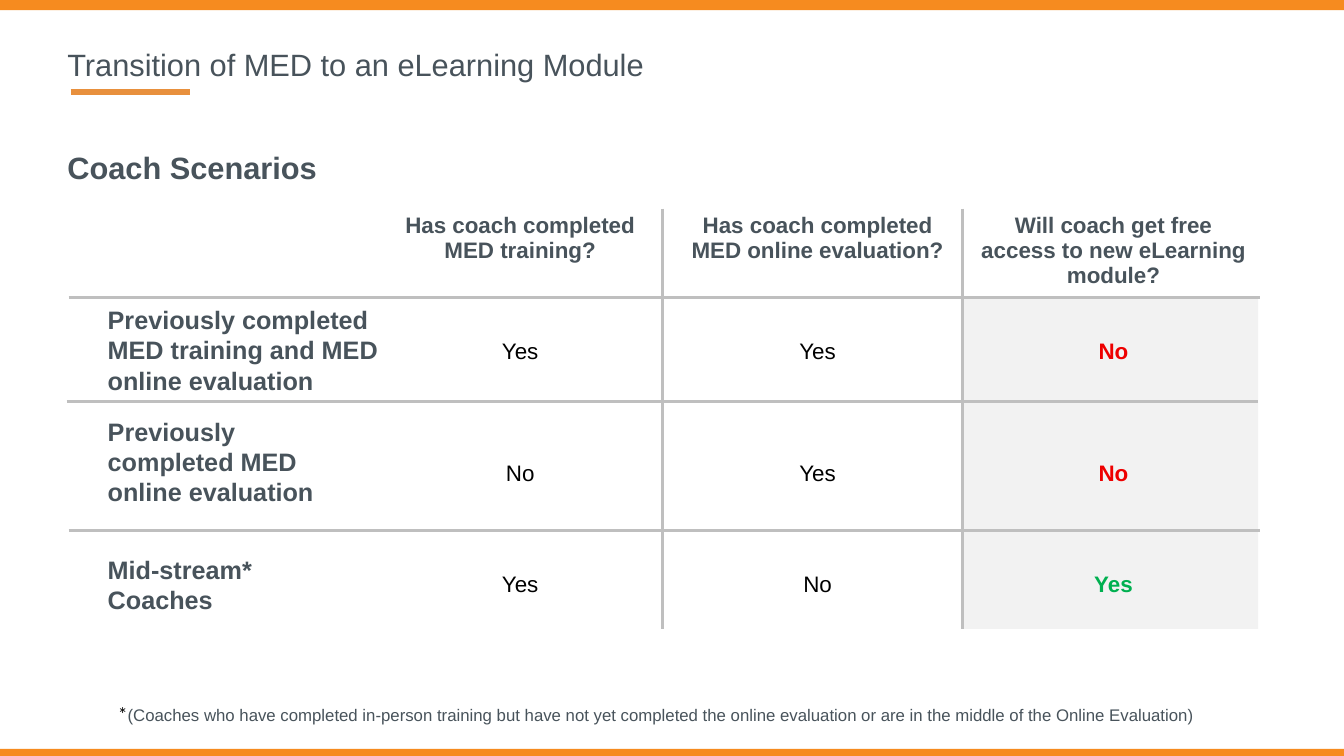
"""Build the slide of coach scenarios for the move to an eLearning module."""
from dataclasses import dataclass

import lxml.etree
import pptx
import pptx.dml.color
import pptx.enum.shapes
import pptx.enum.text
import pptx.oxml.ns
import pptx.util

Inches = pptx.util.Inches
Pt = pptx.util.Pt
SLATE, BLACK, RED, GREEN = "48535B", "000000", "EE0000", "00B050"
ORANGE, GREY, PALE = "F68B1F", "BFBFBF", "F2F2F2"
NO_STYLE_TABLE = "{2D5ABB26-0587-4C30-8999-92F81FD0307C}"


@dataclass
class Span:
    text: str
    size: float
    color: str = SLATE
    bold: bool = False
    font: str = "Arial"


@dataclass
class TextBlock:
    left: float
    top: float
    width: float
    height: float
    spans: list[Span]
    middle: bool = False


@dataclass
class Bar:
    left: float
    top: float
    width: float
    height: float
    color: str


@dataclass
class Rule:
    x1: float
    y1: float
    x2: float
    y2: float
    color: str = GREY
    weight: float = 2.25


@dataclass
class Scenario:
    height: float
    answers: list[str]
    verdict_color: str
    drop: float = 0.05


BARS = [
    Bar(0, 0, 13.33, 0.1, ORANGE),
    Bar(0, 7.43, 13.33, 0.07, ORANGE),
    Bar(9.55, 2.95, 2.93, 3.29, PALE),
]
HEADINGS = [
    TextBlock(0.57, 0.38, 7.96, 0.51,
              [Span("Transition of MED to an eLearning Module", 22)], True),
    TextBlock(0.57, 1.43, 11.08, 0.51, [Span("Coach Scenarios", 22, bold=True)]),
    TextBlock(1.07, 6.91, 11.74, 0.34, [
        Span("*", 14, BLACK, font="Calibri"),
        Span("(Coaches who have completed in-person training but have not yet "
             "completed the online evaluation or are in the middle of the "
             "Online Evaluation)", 12),
    ]),
]
LABELS = [
    TextBlock(0.97, top, width, height, [Span(text, 18, bold=True)])
    for top, width, height, text in [
        (2.97, 3, 1.01, "Previously completed MED training and MED online evaluation"),
        (4.08, 2.58, 1.01, "Previously completed MED online evaluation"),
        (5.45, 2.49, 0.71, "Mid-stream* Coaches"),
    ]
]
COLUMN_WIDTHS = [2.42, 2.92, 2.98, 2.89]
HEADER_HEIGHT = 1.3
QUESTIONS = [
    "Has coach completed\nMED training?",
    "Has coach completed MED online evaluation?",
    "Will coach get free access to new eLearning module?",
]
SCENARIOS = [
    Scenario(1.01, ["Yes", "Yes", "No"], RED),
    Scenario(1.3, ["No", "Yes", "No"], RED, 0.25),
    Scenario(0.72, ["Yes", "No", "Yes"], GREEN),
]
UNDERLINE = Rule(0.7, 0.91, 1.88, 0.91, "E8903D", 4)
GRID = [Rule(x, 2.07, x, 6.24) for x in (6.57, 9.55)] + [
    Rule(left, y, left + 11.82, y)
    for left, y in ((0.68, 5.26), (0.66, 3.98), (0.68, 2.95))
]


def rgb(color: str) -> pptx.dml.color.RGBColor:
    return pptx.dml.color.RGBColor.from_string(color)


def style_font(font, look: Span) -> None:
    font.name = look.font
    font.size = Pt(look.size)
    font.bold = look.bold
    font.color.rgb = rgb(look.color)


def draw_bar(page, bar: Bar) -> None:
    shape = page.shapes.add_shape(
        pptx.enum.shapes.MSO_SHAPE.RECTANGLE,
        Inches(bar.left), Inches(bar.top), Inches(bar.width), Inches(bar.height))
    shape.shadow.inherit = False
    shape.fill.solid()
    shape.fill.fore_color.rgb = rgb(bar.color)
    shape.line.fill.background()


def draw_rule(page, rule: Rule) -> None:
    line = page.shapes.add_connector(
        pptx.enum.shapes.MSO_CONNECTOR.STRAIGHT,
        Inches(rule.x1), Inches(rule.y1), Inches(rule.x2), Inches(rule.y2))
    line.line.color.rgb = rgb(rule.color)
    line.line.width = Pt(rule.weight)
    lxml.etree.SubElement(line._element.spPr, pptx.oxml.ns.qn("a:effectLst"))


def draw_text(page, block: TextBlock) -> None:
    box = page.shapes.add_textbox(
        Inches(block.left), Inches(block.top), Inches(block.width), Inches(block.height))
    frame = box.text_frame
    frame.word_wrap = True
    if block.middle:
        frame.vertical_anchor = pptx.enum.text.MSO_ANCHOR.MIDDLE
    para = frame.paragraphs[0]
    for span in block.spans:
        run = para.add_run()
        run.text = span.text
        style_font(run.font, span)


def fill_cell(cell, look: Span, drop: float = 0.05, spacing: float | None = None) -> None:
    cell.margin_left, cell.margin_right = Inches(0.07), Inches(0.13)
    cell.margin_top = Inches(drop)
    cell.text_frame.text = look.text
    for para in cell.text_frame.paragraphs:
        para.alignment = pptx.enum.text.PP_ALIGN.CENTER
        if spacing is not None:
            para.line_spacing = Pt(spacing)
        for run in para.runs:
            style_font(run.font, look)


def draw_table(page) -> None:
    heights = [HEADER_HEIGHT] + [scenario.height for scenario in SCENARIOS]
    frame = page.shapes.add_table(
        len(heights), len(COLUMN_WIDTHS), Inches(1.31), Inches(2.07),
        Inches(sum(COLUMN_WIDTHS)), Inches(sum(heights)))
    table = frame.table
    table.first_row = table.horz_banding = False
    table._tbl.tblPr.find(pptx.oxml.ns.qn("a:tableStyleId")).text = NO_STYLE_TABLE
    for column, width in zip(table.columns, COLUMN_WIDTHS):
        column.width = Inches(width)
    for row, height in zip(table.rows, heights):
        row.height = Inches(height)
    for cell in table.iter_cells():
        cell.fill.background()
    for column, question in enumerate(QUESTIONS, 1):
        fill_cell(table.cell(0, column), Span(question, 16, bold=True))
    for row, scenario in enumerate(SCENARIOS, 1):
        for column, answer in enumerate(scenario.answers, 1):
            verdict = column == len(scenario.answers)
            color = scenario.verdict_color if verdict else BLACK
            fill_cell(table.cell(row, column), Span(answer, 16, color, verdict),
                      scenario.drop, 14.2)


def main() -> None:
    deck = pptx.Presentation()
    deck.slide_width, deck.slide_height = Inches(13.33), Inches(7.5)
    page = deck.slides.add_slide(deck.slide_layouts[6])
    draw_rule(page, UNDERLINE)
    for bar in BARS:
        draw_bar(page, bar)
    for block in HEADINGS:
        draw_text(page, block)
    draw_table(page)
    for block in LABELS:
        draw_text(page, block)
    for rule in GRID:
        draw_rule(page, rule)
    deck.save("out.pptx")


if __name__ == "__main__":
    main()
